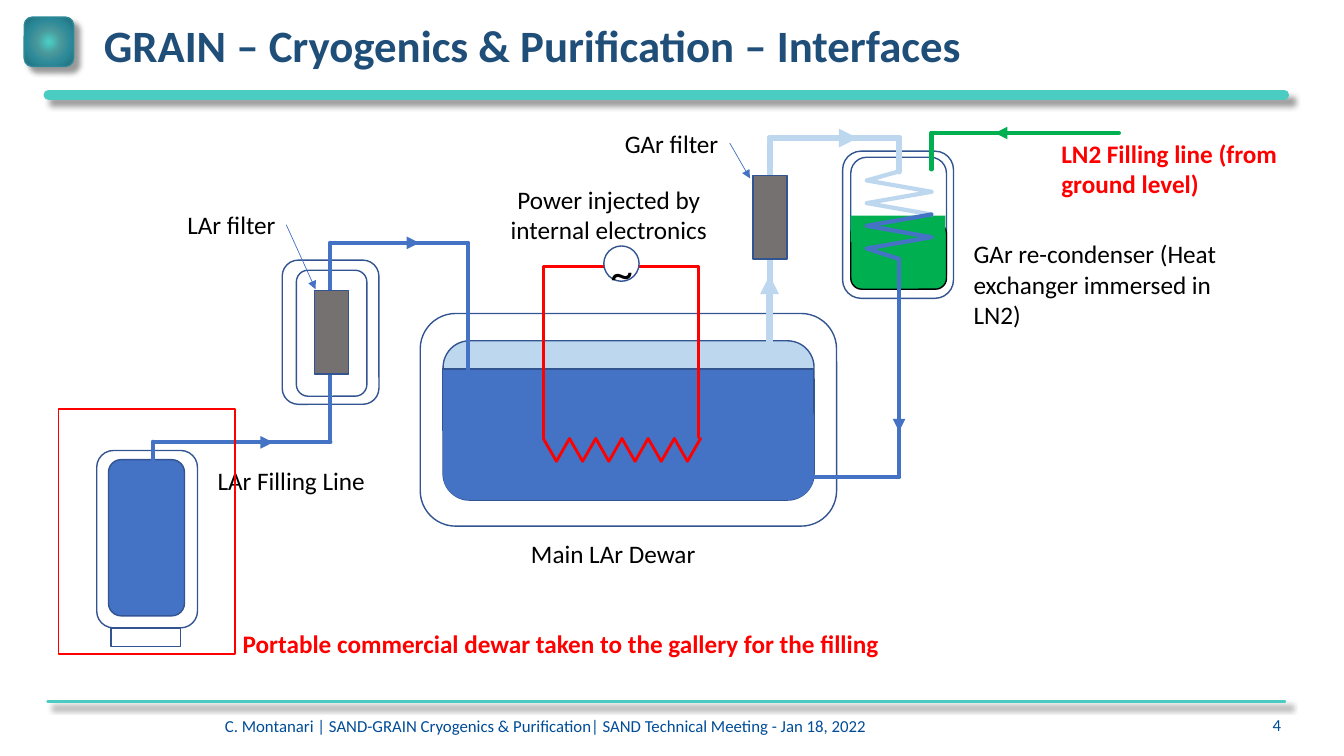
"""Build the slide on the GRAIN cryogenics and purification interfaces."""
from lxml import etree
from pptx import Presentation
from pptx.dml.color import RGBColor
from pptx.enum import shapes as kinds, text as styles
from pptx.oxml import parse_xml
from pptx.oxml.ns import nsdecls, qn
from pptx.util import Pt

TEAL = RGBColor(0x4B, 0xCC, 0xC3)
DARK_TEAL = RGBColor(0x2B, 0x89, 0x99)
NAVY = RGBColor(0x1F, 0x4E, 0x79)
FOOTER_BLUE = RGBColor(0x00, 0x4C, 0x97)
OUTLINE = RGBColor(0x32, 0x54, 0x91)
LIQUID = RGBColor(0x44, 0x72, 0xC4)
VAPOUR = RGBColor(0xBD, 0xD7, 0xEE)
NITROGEN = RGBColor(0x00, 0xB0, 0x50)
GREY = RGBColor(0x76, 0x71, 0x71)
RED = RGBColor(0xFF, 0x00, 0x00)
BLACK = RGBColor(0x00, 0x00, 0x00)
WHITE = RGBColor(0xFF, 0xFF, 0xFF)

ROUND = kinds.MSO_SHAPE.ROUNDED_RECTANGLE
RECT = kinds.MSO_SHAPE.RECTANGLE
OVAL = kinds.MSO_SHAPE.OVAL
LEFT, CENTER, RIGHT = styles.PP_ALIGN.LEFT, styles.PP_ALIGN.CENTER, styles.PP_ALIGN.RIGHT

TITLE = "GRAIN – Cryogenics & Purification – Interfaces"
FOOTER = "C. Montanari | SAND-GRAIN Cryogenics & Purification| SAND Technical Meeting - Jan 18, 2022"
PAGE = "4"
ICON_STOPS = [(3, "4BCCC3"), (36, "49979A"), (64, "2B8999"), (96, "216E79")]
HEADER_RULES = [(67.7, 7), (501.1, 2.75)]

VESSELS = [
    (ROUND, (69.1, 321.8, 72, 126.7), WHITE, OUTLINE),
    (ROUND, (77.5, 328.3, 54.3, 111.6), LIQUID, OUTLINE),
    (RECT, (79.2, 448.6, 49.7, 13), WHITE, OUTLINE),
    (ROUND, (201.6, 185.8, 69.1, 103), WHITE, OUTLINE),
    (ROUND, (211.7, 193, 50.4, 90), WHITE, OUTLINE),
    (ROUND, (601.9, 108, 79.2, 105.1), WHITE, OUTLINE),
    (ROUND, (607.7, 112.3, 68.4, 94.3), WHITE, OUTLINE),
    (ROUND, (607.7, 159.1, 68.4, 47.5), NITROGEN, BLACK),
    (RECT, (607.7, 154.1, 67.7, 18.7), NITROGEN, None),
    (ROUND, (300.2, 223.9, 297.4, 151.9), WHITE, OUTLINE),
    (ROUND, (316.5, 243.4, 265, 113.8), VAPOUR, OUTLINE),
    (RECT, (316.1, 263.5, 265, 43.9), LIQUID, OUTLINE),
]
MAIN_LIQUID = (316.5, 280.8, 265, 76.3)
POWER_SOURCE = (431.3, 175.7, 25.2, 25.2)
FILTERS = [(537.8, 125.3, 24.5, 59.8), (224.6, 207.4, 24.5, 59.8)]
PORTABLE_FRAME = (41.8, 292.3, 126, 175)

HEATER = [(388.1 + 9.36 * i, 329.5 if i % 2 else 313.2) for i in range(13)]
COIL = [(665.3 if i % 2 else 619.2, 128.9 + 8.1 * i) for i in range(7)]
COIL_TOP, COIL_END = (642.2, 122.4), (642.2, 185)

HEATER_PIPES = [
    (HEATER, RED, 2),
    ([(388.1, 312.5), (388.1, 190.4), (499, 190.4), (499, 312.5)], RED, 2),
]
PIPES = [
    ([(550, 244), (550, 98.6), (642.2, 98.6), COIL_TOP], VAPOUR, 4.5),
    ([COIL_TOP] + COIL[:4], VAPOUR, 3),
    (COIL[3:] + [COIL_END, (642.2, 340.6), (578.9, 340.6)], LIQUID, 3),
    ([(109.4, 334.8), (109.4, 315.6), (236, 315.6), (236, 173.5),
      (334.1, 173.5), (334.1, 316.1)], LIQUID, 3),
    ([(799.2, 95), (665.3, 95), (665.3, 121)], NITROGEN, 3),
]
ARROWS = [
    ([(549.7, 245.5), (549.7, 196.6)], VAPOUR, 4.5),
    ([(568.8, 98.6), (612.7, 98.6)], VAPOUR, 4.5),
    ([(642.2, 235.4), (642.2, 308.2)], LIQUID, 3),
    ([(155.5, 316), (195.1, 316)], LIQUID, 3),
    ([(250.6, 173.5), (299.5, 173.5)], LIQUID, 3),
    ([(788.4, 95), (710.6, 95)], NITROGEN, 3),
    ([(204.5, 160.6), (225.4, 206.6)], LIQUID, 0.5),
    ([(521.3, 102.2), (535.7, 127.4)], LIQUID, 0.5),
]

LABELS = [
    ("~", (429.1, 171.4, 31, 46), dict(size=32)),
    ("Main LAr Dewar", (372.2, 380.9, 133.2, 28.8), {}),
    ("Power injected by internal electronics", (357.1, 128.2, 155.5, 51.1),
     dict(wrap=True, align=CENTER)),
    ("LAr Filling Line", (148.3, 329, 121, 28.8), {}),
    ("GAr re-condenser (Heat exchanger immersed in LN2)", (688.3, 167, 219.6, 72.7),
     dict(wrap=True)),
    ("GAr filter", (439.2, 87.8, 82.1, 28.8), {}),
    ("LAr filter", (126.7, 146.2, 78.5, 28.8), {}),
    ("LN2 Filling line (from ground level)", (751, 95, 172.8, 51.1),
     dict(wrap=True, color=RED, bold=True)),
    ("Portable commercial dewar taken to the gallery for the filling",
     (166.3, 445, 472.3, 28.8), dict(color=RED, bold=True)),
    (FOOTER, (160.6, 511.2, 647.3, 18.7), dict(size=12, color=FOOTER_BLUE, inset=0, wrap=True)),
    (PAGE, (871.9, 510.5, 43.2, 19.4),
     dict(size=12, color=FOOTER_BLUE, inset=0, wrap=True, align=RIGHT)),
]

SHADOW = (f'<a:outerShdw {nsdecls("a")} blurRad="50800" dist="76200" dir="2700000">'
          '<a:srgbClr val="000000"><a:alpha val="40000"/></a:srgbClr></a:outerShdw>')


def write(frame, words, size=18, color=BLACK, bold=False, align=LEFT, wrap=False, inset=None):
    """Fill a text frame with one formatted paragraph."""
    frame.word_wrap = wrap
    if inset is not None:
        frame.margin_left = frame.margin_right = Pt(inset)
        frame.margin_top = frame.margin_bottom = Pt(inset)
    line = frame.paragraphs[0]
    line.alignment = align
    run = line.add_run()
    run.text = words
    run.font.name, run.font.size, run.font.bold = "Calibri", Pt(size), bold
    run.font.color.rgb = color


def draw(slide, form, place, fill, outline):
    """Add a preset shape without a shadow."""
    part = slide.shapes.add_shape(form, *map(Pt, place))
    part.shadow.inherit = False
    if fill is None:
        part.fill.background()
    else:
        part.fill.solid()
        part.fill.fore_color.rgb = fill
    if outline is None:
        part.line.fill.background()
    else:
        part.line.color.rgb = outline
        part.line.width = Pt(1)
    return part


def pipe(slide, stops, color, width, arrow=False, shadow=False):
    """Join successive stops with straight connectors."""
    for start, end in zip(stops, stops[1:]):
        piece = slide.shapes.add_connector(
            kinds.MSO_CONNECTOR.STRAIGHT, *map(Pt, start + end))
        piece.line.color.rgb = color
        piece.line.width = Pt(width)
        props = piece._element.spPr
        stroke = props.find(qn("a:ln"))
        if arrow:
            etree.SubElement(stroke, qn("a:tailEnd"), type="triangle")
        else:
            stroke.set("cap", "rnd")
        effects = etree.SubElement(props, qn("a:effectLst"))
        if shadow:
            effects.append(parse_xml(SHADOW))


def header(slide):
    """Add the corner icon, the two rules and the title."""
    icon = draw(slide, ROUND, (17.3, 12.2, 35.3, 35.3), TEAL, DARK_TEAL)
    props = icon._element.spPr
    stops = "".join(f'<a:gs pos="{at * 1000}"><a:srgbClr val="{tint}"/></a:gs>'
                    for at, tint in ICON_STOPS)
    props.replace(props.find(qn("a:solidFill")), parse_xml(
        f'<a:gradFill {nsdecls("a")}><a:gsLst>{stops}</a:gsLst><a:path path="circle">'
        '<a:fillToRect l="50000" t="50000" r="50000" b="50000"/></a:path></a:gradFill>'))
    props.find(qn("a:effectLst")).append(parse_xml(SHADOW))
    for y, width in HEADER_RULES:
        pipe(slide, [(34.6, y), (917.3, y)], TEAL, width, shadow=True)
    title = slide.shapes.title
    title.left, title.top, title.width, title.height = map(Pt, (67, 15.1, 866.2, 38.9))
    title.text_frame.vertical_anchor = styles.MSO_ANCHOR.MIDDLE
    write(title.text_frame, TITLE, size=32, color=NAVY, bold=True, wrap=True)
    title.text_frame.paragraphs[0].line_spacing = 0.9


def main():
    """Lay out the cryogenic circuit and save the deck."""
    deck = Presentation()
    deck.slide_width, deck.slide_height = Pt(960), Pt(540)
    slide = deck.slides.add_slide(deck.slide_layouts[5])
    header(slide)
    for vessel in VESSELS:
        draw(slide, *vessel)
    draw(slide, ROUND, MAIN_LIQUID, LIQUID, None).adjustments[0] = 0.24
    for run in HEATER_PIPES:
        pipe(slide, *run)
    draw(slide, OVAL, POWER_SOURCE, WHITE, OUTLINE)
    for run in PIPES:
        pipe(slide, *run)
    for place in FILTERS:
        draw(slide, RECT, place, GREY, OUTLINE)
    for run in ARROWS:
        pipe(slide, *run, arrow=True)
    for words, place, look in LABELS:
        write(slide.shapes.add_textbox(*map(Pt, place)).text_frame, words, **look)
    draw(slide, RECT, PORTABLE_FRAME, None, RED)
    deck.save("out.pptx")


if __name__ == "__main__":
    main()
